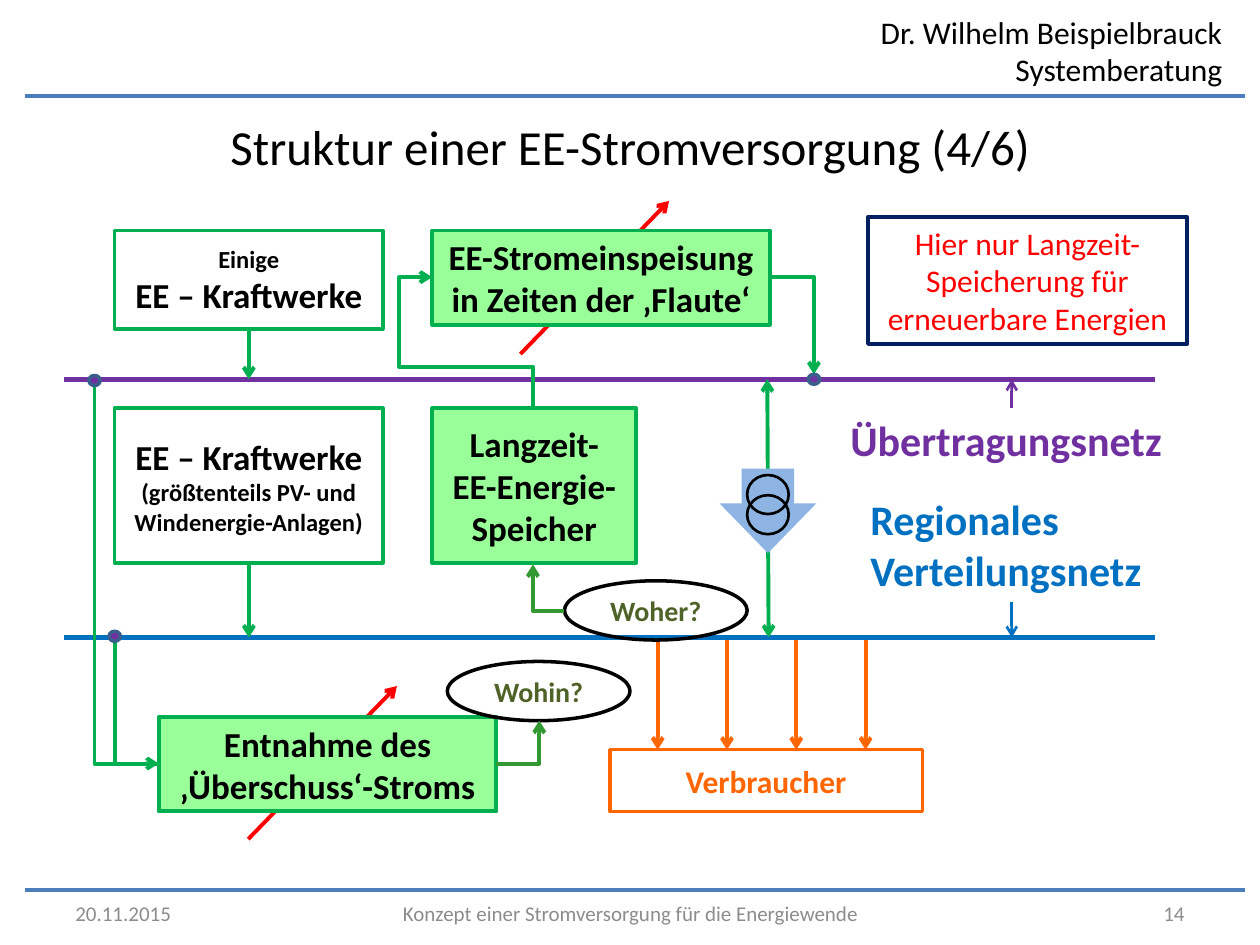
from lxml import etree
from pptx import Presentation
from pptx import util as u
from pptx.dml.color import RGBColor
from pptx.enum import shapes, text
from pptx.oxml import ns

COLUMNS, ROWS = 100, 75
WIDTH, HEIGHT = u.Inches(10), u.Inches(7.5)
FONT = "Calibri"
BLACK = RGBColor(0x00, 0x00, 0x00)
RED = RGBColor(0xFF, 0x00, 0x00)
GREY = RGBColor(0x8C, 0x8C, 0x8C)
RULE_BLUE = RGBColor(0x4B, 0x7E, 0xBC)
NAVY = RGBColor(0x00, 0x20, 0x60)
REGIONAL_BLUE = RGBColor(0x00, 0x70, 0xC0)
PURPLE = RGBColor(0x70, 0x30, 0xA0)
GREEN = RGBColor(0x00, 0xB0, 0x50)
DARK_GREEN = RGBColor(0x33, 0x99, 0x33)
OLIVE = RGBColor(0x4F, 0x62, 0x28)
LIGHT_GREEN = RGBColor(0x99, 0xFF, 0x99)
ORANGE = RGBColor(0xFF, 0x66, 0x00)
ARROW_BLUE = RGBColor(0x8E, 0xB4, 0xE3)
NODE_BLUE = RGBColor(0x3A, 0x5F, 0x8C)

TRANSMISSION_ROW, REGIONAL_ROW = 30.1, 50.6
PLANT_COLUMN, PLANT_WIDTH = 9.1, 21.3
PLANT_CENTRE = PLANT_COLUMN + PLANT_WIDTH / 2
STORAGE_COLUMN, FEED_WIDTH, FEED_HEIGHT = 34.3, 26.8, 7.5
NET_LABEL_COLUMN = 80.3


def x(column):
    return round(WIDTH * column / COLUMNS)


def y(row):
    return round(HEIGHT * row / ROWS)


def area(column, row, columns, rows):
    return x(column), y(row), x(columns), y(rows)


def write(frame, lines, size, color, bold=False, align=text.PP_ALIGN.CENTER):
    frame.word_wrap = True
    for index, line in enumerate(lines):
        content, line_size = line if isinstance(line, tuple) else (line, size)
        paragraph = frame.paragraphs[0] if index == 0 else frame.add_paragraph()
        paragraph.text = content
        paragraph.alignment = align
        font = paragraph.font
        font.name, font.size, font.bold = FONT, u.Pt(line_size), bold
        font.color.rgb = color


def add_label(slide, place, content, size, color, bold=False,
              align=text.PP_ALIGN.LEFT, anchor=text.MSO_ANCHOR.TOP):
    box = slide.shapes.add_textbox(*area(*place))
    box.text_frame.vertical_anchor = anchor
    write(box.text_frame, [content], size, color, bold, align)


def style(shape, fill, line, weight):
    shape.shadow.inherit = False
    if fill is None:
        shape.fill.background()
    else:
        shape.fill.solid()
        shape.fill.fore_color.rgb = fill
    if line is None:
        shape.line.fill.background()
    else:
        shape.line.color.rgb = line
        shape.line.width = u.Pt(weight)


def add_figure(slide, kind, place, line=None, fill=None, weight=2):
    shape = slide.shapes.add_shape(kind, *area(*place))
    style(shape, fill, line, weight)
    return shape


def add_box(slide, place, lines, line=GREEN, fill=None, color=BLACK,
            size=20, weight=2, bold=True, kind=shapes.MSO_SHAPE.RECTANGLE):
    shape = add_figure(slide, kind, place, line, fill, weight)
    write(shape.text_frame, lines, size, color, bold)


def add_arrowheads(shape, ends):
    for end in ends:
        head = etree.SubElement(shape.line._get_or_add_ln(), ns.qn(f"a:{end}"))
        head.set("type", "arrow")


def add_line(slide, start, end, color, weight=2.25, ends=("tailEnd",)):
    line = slide.shapes.add_connector(
        shapes.MSO_CONNECTOR.STRAIGHT, x(start[0]), y(start[1]), x(end[0]), y(end[1]))
    line.line.color.rgb = color
    line.line.width = u.Pt(weight)
    add_arrowheads(line, ends)
    etree.SubElement(line._element.spPr, ns.qn("a:effectLst"))


def add_bent_line(slide, points, color=GREEN, ends=("tailEnd",)):
    corners = [(x(column), y(row)) for column, row in points]
    builder = slide.shapes.build_freeform(*corners[0])
    builder.add_line_segments(corners[1:], close=False)
    shape = builder.convert_to_shape()
    style(shape, None, color, 2.25)
    add_arrowheads(shape, ends)


def add_node(slide, column, row):
    add_figure(slide, shapes.MSO_SHAPE.OVAL, (column - 0.45, row - 0.4, 0.9, 0.8),
               NODE_BLUE, PURPLE)


def add_frame(slide):
    add_label(slide, (67.3, 0.5, 30.7, 7.1), "Dr. Wilhelm Beispielbrauck\vSystemberatung",
              18, BLACK, align=text.PP_ALIGN.RIGHT)
    for row in (7.6, 70.6):
        add_line(slide, (98.8, row), (2, row), RULE_BLUE, ends=())
    footers = (
        (5, 20.6, "20.11.2015", text.PP_ALIGN.LEFT),
        (27.2, 45.7, "Konzept einer Stromversorgung für die Energiewende", text.PP_ALIGN.CENTER),
        (74.4, 20.6, "14", text.PP_ALIGN.RIGHT),
    )
    for column, columns, content, align in footers:
        add_label(slide, (column, 70.5, columns, 4), content, 12, GREY,
                  align=align, anchor=text.MSO_ANCHOR.MIDDLE)
    title = slide.shapes.title
    title.left, title.top, title.width, title.height = area(5, 8.5, 90, 6.1)
    write(title.text_frame, ["Struktur einer EE-Stromversorgung (4/6)"], 28, BLACK)


def add_networks(slide):
    for column, row in ((41.3, 28.1), (19.7, 66.6)):
        add_line(slide, (column, row), (column + 11.8, row - 12.15), RED)
    for index in range(4):
        column = 52.2 + 5.5 * index
        add_line(slide, (column, REGIONAL_ROW), (column, 59.5), ORANGE)
    for row, color in ((REGIONAL_ROW, REGIONAL_BLUE), (TRANSMISSION_ROW, PURPLE)):
        add_line(slide, (5.1, row), (91.7, row), color, 3, ())
    add_label(slide, (68.1, 38.7, 24.4, 9.1), "Regionales Verteilungsnetz",
              24, REGIONAL_BLUE, True)
    add_label(slide, (66.5, 32.4, 27.6, 5), "Übertragungsnetz", 24, PURPLE, True)
    add_line(slide, (NET_LABEL_COLUMN, 47.8), (NET_LABEL_COLUMN, REGIONAL_ROW),
             REGIONAL_BLUE, 1.5)
    add_line(slide, (NET_LABEL_COLUMN, 32.4), (NET_LABEL_COLUMN, TRANSMISSION_ROW),
             PURPLE, 1.5)


def add_plants_and_storage(slide):
    add_box(slide, (PLANT_COLUMN, 18.3, PLANT_WIDTH, 7.8), [("Einige", 14), "EE – Kraftwerke"])
    add_box(slide, (PLANT_COLUMN, 32.4, PLANT_WIDTH, 12.3),
            ["EE – Kraftwerke", ("(größtenteils PV- und\vWindenergie-Anlagen)", 14)])
    for start, end in ((26, TRANSMISSION_ROW), (44.8, REGIONAL_ROW)):
        add_line(slide, (PLANT_CENTRE, start), (PLANT_CENTRE, end), GREEN)
    add_box(slide, (48.4, 59.5, 24.8, 4.9), ["Verbraucher"], ORANGE, color=ORANGE, size=18)
    add_box(slide, (12.6, 56.9, FEED_WIDTH, FEED_HEIGHT),
            ["Entnahme des ‚Überschuss‘-Stroms"], fill=LIGHT_GREEN, weight=2.25)
    add_box(slide, (STORAGE_COLUMN, 18.3, FEED_WIDTH, FEED_HEIGHT),
            ["EE-Stromeinspeisung in Zeiten der ‚Flaute‘"], fill=LIGHT_GREEN)
    add_box(slide, (STORAGE_COLUMN, 32.4, 16.2, 12.3),
            ["Langzeit-\vEE-Energie-Speicher"], fill=LIGHT_GREEN)


def add_transformer(slide):
    add_line(slide, (61, REGIONAL_ROW), (60.9, TRANSMISSION_ROW), GREEN,
             ends=("headEnd", "tailEnd"))
    arrow = add_figure(slide, shapes.MSO_SHAPE.DOWN_ARROW, (57.1, 37.2, 7.7, 6.7),
                       fill=ARROW_BLUE)
    arrow.adjustments[0], arrow.adjustments[1] = 0.54, 0.59
    for row in (37.7, 39.3):
        add_figure(slide, shapes.MSO_SHAPE.OVAL, (59.3, row, 3.3, 3.1), BLACK, weight=1.5)


def add_flows(slide):
    add_bent_line(slide, [(61, 22), (64.6, 22), (64.6, 29.7)])
    add_bent_line(slide, [(42.3, 32.4), (42.3, 29.1), (31.7, 29.1), (31.7, 22),
                          (STORAGE_COLUMN, 22)])
    add_bent_line(slide, [(9.1, REGIONAL_ROW), (9.1, 60.6), (12.6, 60.6)])
    add_bent_line(slide, [(7.5, TRANSMISSION_ROW), (7.5, 60.6), (12.6, 60.6)], ends=())
    for column, row in ((64.6, TRANSMISSION_ROW), (7.5, 30.2), (9.1, 50.5)):
        add_node(slide, column, row)
    for column, row, question in ((44.8, 46.1, "Woher?"), (35.5, 52.5, "Wohin?")):
        add_box(slide, (column, row, 14.5, 4.7), [question], BLACK, color=OLIVE,
                size=16, kind=shapes.MSO_SHAPE.OVAL)
    add_bent_line(slide, [(44.8, 48.5), (42.3, 48.5), (42.3, 44.8)], DARK_GREEN)
    add_bent_line(slide, [(39.4, 60.6), (42.8, 60.6), (42.8, 57.2)], DARK_GREEN)


def main():
    presentation = Presentation()
    presentation.slide_width, presentation.slide_height = WIDTH, HEIGHT
    slide = presentation.slides.add_slide(presentation.slide_layouts[5])
    add_frame(slide)
    add_networks(slide)
    add_plants_and_storage(slide)
    add_transformer(slide)
    add_flows(slide)
    add_box(slide, (68.9, 17.2, 25.3, 10.1),
            ["Hier nur Langzeit-Speicherung für\verneuerbare Energien"],
            NAVY, color=RED, size=18, weight=2.25, bold=False)
    presentation.save("out.pptx")


if __name__ == "__main__":
    main()
